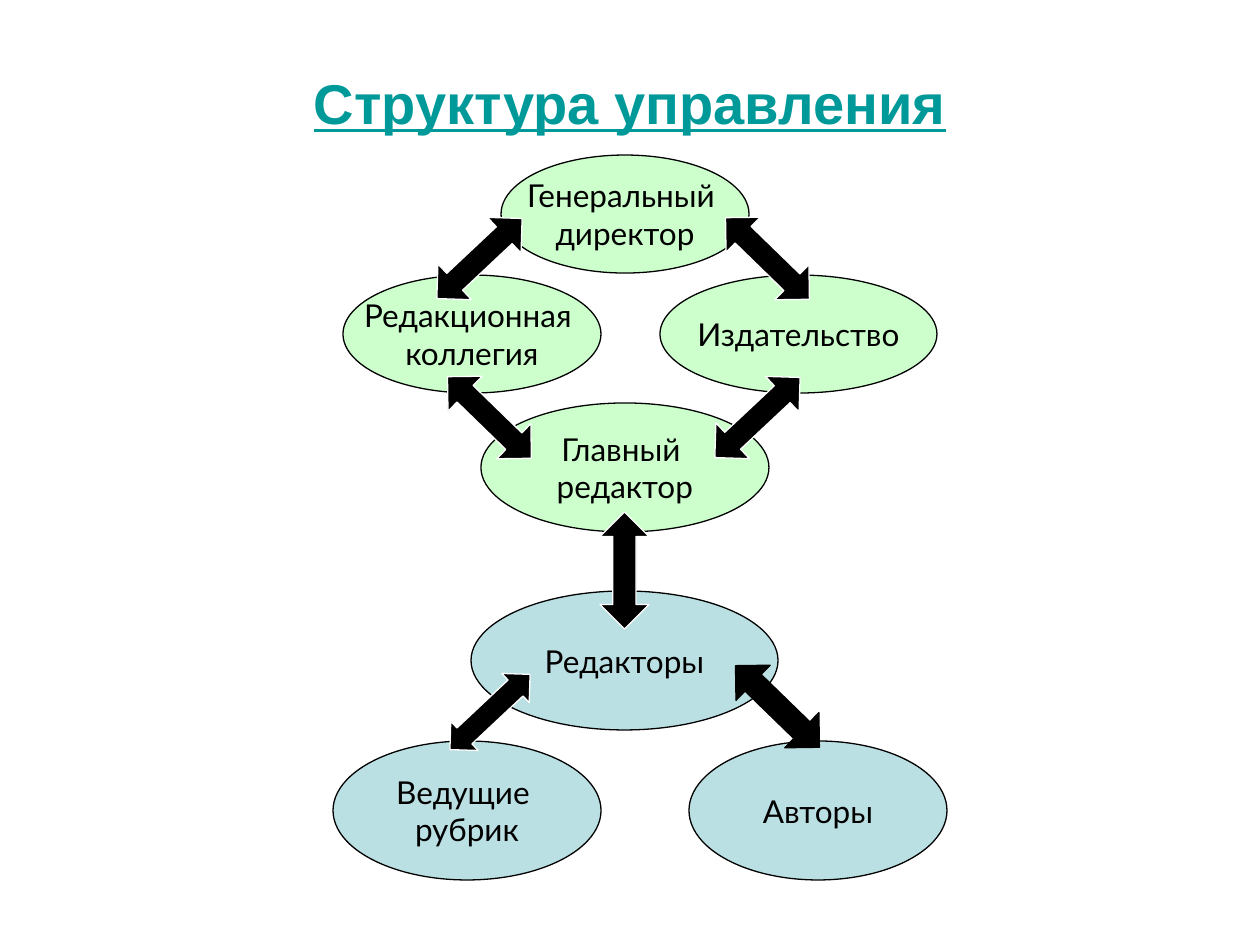
import dataclasses

import pptx
import pptx.dml.color
import pptx.enum.shapes
import pptx.enum.text
import pptx.util

EMU_PER_PX = 914400 / 126
SHAPES = pptx.enum.shapes.MSO_SHAPE
ALIGN = pptx.enum.text.PP_ALIGN
ANCHOR = pptx.enum.text.MSO_ANCHOR


@dataclasses.dataclass(frozen=True)
class Theme:
    """Colours, fonts and type sizes of the slide."""
    title: str = "009999"
    management: str = "CCFFCC"
    staff: str = "BBE0E3"
    ink: str = "000000"
    paper: str = "FFFFFF"
    title_font: str = "Arial"
    label_font: str = "Lato"
    title_size: int = 32
    label_size: int = 18
    line_width: float = 0.75


THEME = Theme()

TITLE_BOX = (63, 62, 1134, 80)
MANAGEMENT_BOX = (343, 155, 594, 377)
STAFF_BOX = (333, 591, 614, 289)
LINK_BOX = (600, 512, 49, 117)

MANAGEMENT_ROLES = [
    (["Генеральный ", "директор"], (158, 0, 248, 118)),
    (["Редакционная ", "коллегия"], (0, 120, 258, 118)),
    (["Главный ", "редактор"], (138, 248, 288, 129)),
    (["Издательство"], (317, 120, 277, 118)),
]
STAFF_ROLES = [
    (["Авторы"], (356, 150, 258, 139)),
    (["Ведущие ", "рубрик"], (0, 150, 268, 139)),
    (["Редакторы"], (138, 0, 307, 139)),
]
RISING, FALLING = 46.8, 134.2
MANAGEMENT_ARROWS = [
    ((112, 45, 49, 117), RISING),
    ((400, 45, 49, 117), FALLING),
    ((122, 204, 49, 117), FALLING),
    ((390, 204, 49, 117), RISING),
]


def px(length):
    """Turn px into EMU."""
    return pptx.util.Emu(round(length * EMU_PER_PX))


def colour(code):
    """Return the colour of a hex code."""
    return pptx.dml.color.RGBColor.from_string(code)


def within(box, part):
    """Move a part's box from its region to the slide."""
    left, top, width, height = part
    return box[0] + left, box[1] + top, width, height


def add_run(paragraph, text, font, size, code):
    """Add one formatted run and return it."""
    run = paragraph.add_run()
    run.text = text
    run.font.name = font
    run.font.size = pptx.util.Pt(size)
    run.font.color.rgb = colour(code)
    return run


def add_filled_shape(slide, kind, box, fill, line):
    """Add a flat preset shape with a thin outline."""
    shape = slide.shapes.add_shape(kind, *map(px, box))
    shape.shadow.inherit = False
    shape.fill.solid()
    shape.fill.fore_color.rgb = colour(fill)
    shape.line.color.rgb = colour(line)
    shape.line.width = pptx.util.Pt(THEME.line_width)
    return shape


def add_role(slide, box, lines, fill):
    """Add an ellipse naming one role."""
    shape = add_filled_shape(slide, SHAPES.OVAL, box, fill, THEME.ink)
    frame = shape.text_frame
    frame.word_wrap = False
    frame.vertical_anchor = ANCHOR.MIDDLE
    for index, line in enumerate(lines):
        paragraph = frame.add_paragraph() if index else frame.paragraphs[0]
        paragraph.alignment = ALIGN.CENTER
        add_run(paragraph, line, THEME.label_font, THEME.label_size, THEME.ink)


def add_arrow(slide, box, rotation=0, line=THEME.paper, head=0.472):
    """Add a two-way block arrow."""
    shape = add_filled_shape(slide, SHAPES.UP_DOWN_ARROW, box, THEME.ink, line)
    shape.adjustments[0] = 0.5
    shape.adjustments[1] = head
    shape.rotation = rotation


def add_title(slide, box):
    """Fill and place the slide title."""
    title = slide.shapes.title
    title.left, title.top, title.width, title.height = map(px, box)
    frame = title.text_frame
    frame.vertical_anchor = ANCHOR.TOP
    paragraph = frame.paragraphs[0]
    paragraph.alignment = ALIGN.CENTER
    run = add_run(paragraph, "Структура управления", THEME.title_font,
                  THEME.title_size, THEME.title)
    run.font.bold = True
    run.font.underline = True


def add_management(slide, box):
    """Add the ring of management roles."""
    for lines, part in MANAGEMENT_ROLES:
        add_role(slide, within(box, part), lines, THEME.management)
    for part, rotation in MANAGEMENT_ARROWS:
        add_arrow(slide, within(box, part), rotation)


def add_staff(slide, box):
    """Add the editors with the roles below them."""
    for lines, part in STAFF_ROLES:
        add_role(slide, within(box, part), lines, THEME.staff)
    add_arrow(slide, within(box, (137, 66, 40, 110)), RISING, head=0.548)
    add_arrow(slide, within(box, (420, 57, 49, 117)), FALLING, line=THEME.ink)


def main():
    """Build and save the presentation."""
    presentation = pptx.Presentation()
    presentation.slide_width = px(1260)
    presentation.slide_height = px(945)
    slide = presentation.slides.add_slide(presentation.slide_layouts[5])
    add_title(slide, TITLE_BOX)
    add_management(slide, MANAGEMENT_BOX)
    add_staff(slide, STAFF_BOX)
    add_arrow(slide, LINK_BOX)
    presentation.save("out.pptx")


if __name__ == "__main__":
    main()
